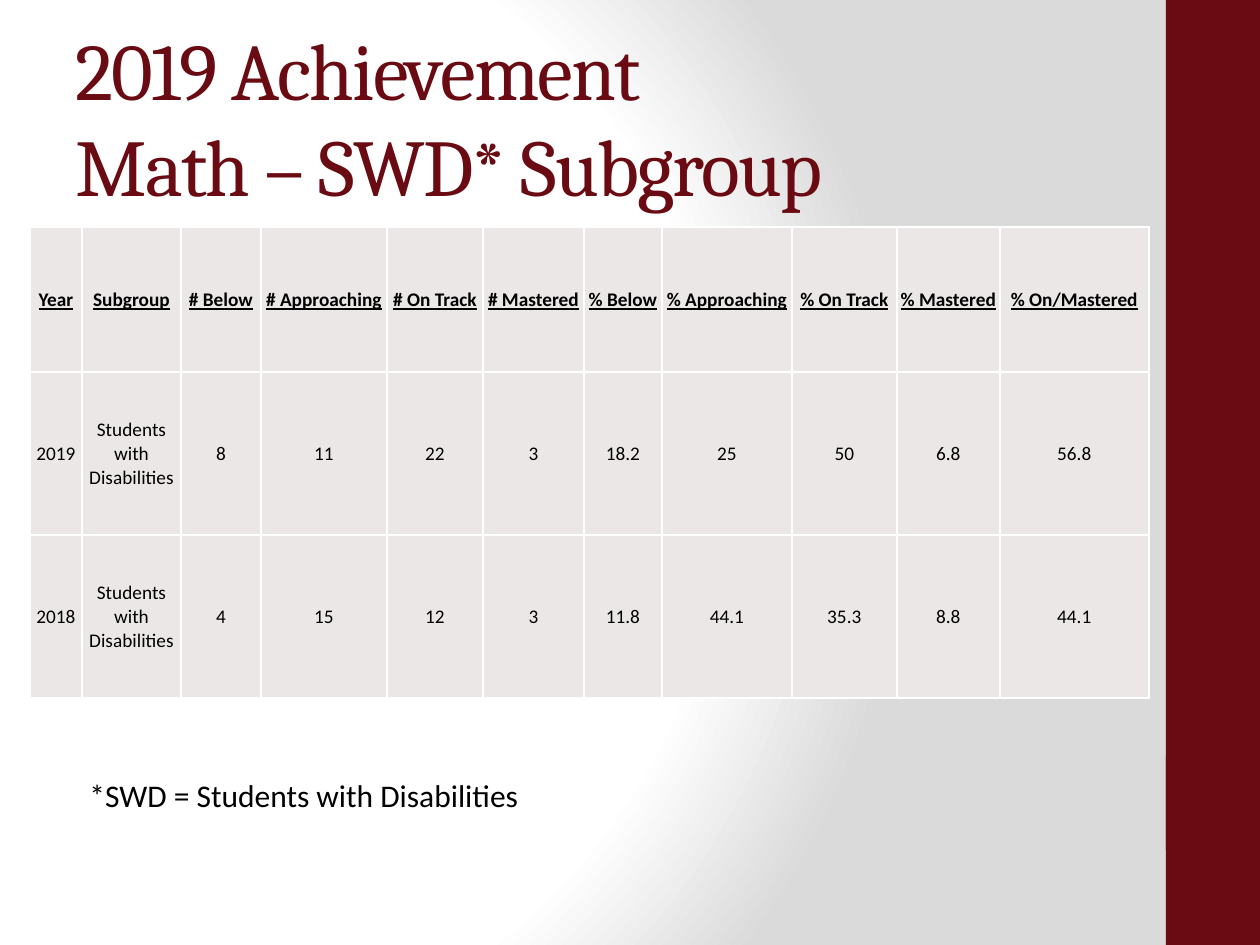
from lxml.etree import SubElement
from pptx import Presentation
from pptx.dml.color import RGBColor
from pptx.enum.shapes import MSO_SHAPE
from pptx.enum.text import MSO_ANCHOR, MSO_AUTO_SIZE, PP_ALIGN
from pptx.oxml import parse_xml
from pptx.oxml.ns import nsdecls, qn
from pptx.util import Emu, Pt

MAROON, BLACK, WHITE, CELL_GRAY = "6A0A12", "000000", "FFFFFF", "EBE7E7"
TITLE = "2019 Achievement\vMath – SWD* Subgroup"
FOOTNOTE = "*SWD = Students with Disabilities"
SUBGROUP = "Students with Disabilities"
TABLE_ROWS = [
    ["Year", "Subgroup", "# Below", "# Approaching", "# On Track", "# Mastered",
     "% Below", "% Approaching", "% On Track", "% Mastered", "% On/Mastered"],
    ["2019", SUBGROUP, "8", "11", "22", "3", "18.2", "25", "50", "6.8", "56.8"],
    ["2018", SUBGROUP, "4", "15", "12", "3", "11.8", "44.1", "35.3", "8.8", "44.1"],
]
COLUMN_WIDTHS = [52, 99, 80, 126, 96, 101, 78, 130, 105, 103, 149]
ROW_HEIGHTS = [145, 163, 163]
SIDE_BANDS = [(1166, 0, 94, 945), (1166, 756, 94, 94)]
GRADIENT_STOPS = [(0, WHITE), (75, WHITE), (100, "DADADA")]


def px(length):
    return Emu(round(length * 914400 / 126))


def color(hex_string):
    return RGBColor.from_string(hex_string)


def write(frame, text, size, font="Calibri", fill=BLACK, align=PP_ALIGN.LEFT,
          bold=False, underline=False, spacing=None):
    frame.text = text
    paragraph = frame.paragraphs[0]
    paragraph.alignment = align
    for run in paragraph.runs:
        run.font.name, run.font.size = font, Pt(size)
        run.font.bold, run.font.underline = bold, underline
        run.font.color.rgb = color(fill)
        if spacing is not None:
            run.font._element.set("spc", str(spacing * 100))


def set_radial_background(slide):
    slide.background.fill.solid()
    properties = slide.background._cSld.bg.bgPr
    stops = "".join(f'<a:gs pos="{position * 1000}"><a:srgbClr val="{value}"/></a:gs>'
                    for position, value in GRADIENT_STOPS)
    gradient = parse_xml(
        f'<a:gradFill {nsdecls("a")} rotWithShape="1"><a:gsLst>{stops}</a:gsLst>'
        '<a:path path="circle"><a:fillToRect l="20000" t="50000" r="100000" b="50000"/>'
        '</a:path></a:gradFill>')
    properties.replace(properties.find(qn("a:solidFill")), gradient)


def add_borders(cell):
    properties = cell._tc.get_or_add_tcPr()
    for index, side in enumerate(("lnL", "lnR", "lnT", "lnB")):
        line = parse_xml(f'<a:{side} {nsdecls("a")} w="12700"/>')
        solid = SubElement(line, qn("a:solidFill"))
        SubElement(solid, qn("a:srgbClr"), val=WHITE)
        properties.insert(index, line)


def add_results_table(slide):
    table = slide.shapes.add_table(
        len(TABLE_ROWS), len(COLUMN_WIDTHS), px(30), px(227),
        px(sum(COLUMN_WIDTHS)), px(sum(ROW_HEIGHTS))).table
    for column, width in zip(table.columns, COLUMN_WIDTHS):
        column.width = px(width)
    for row, height, values in zip(table.rows, ROW_HEIGHTS, TABLE_ROWS):
        row.height = px(height)
        is_header = values is TABLE_ROWS[0]
        for cell, value in zip(row.cells, values):
            cell.fill.solid()
            cell.fill.fore_color.rgb = color(CELL_GRAY)
            cell.margin_left = cell.margin_right = cell.margin_top = px(1)
            cell.margin_bottom = 0
            cell.vertical_anchor = MSO_ANCHOR.MIDDLE
            write(cell.text_frame, value, 11, align=PP_ALIGN.CENTER,
                  bold=is_header, underline=is_header)
            add_borders(cell)


def main():
    presentation = Presentation()
    presentation.slide_width, presentation.slide_height = px(1260), px(945)
    slide = presentation.slides.add_slide(presentation.slide_layouts[5])
    set_radial_background(slide)

    for bounds in SIDE_BANDS:
        band = slide.shapes.add_shape(MSO_SHAPE.RECTANGLE, *map(px, bounds))
        band.shadow.inherit = False
        band.fill.solid()
        band.fill.fore_color.rgb = color(MAROON)
        band.line.fill.background()

    title = slide.shapes.title
    title.left, title.top, title.width, title.height = map(px, (63, 38, 1050, 157))
    title.text_frame.auto_size = MSO_AUTO_SIZE.NONE
    title.text_frame.vertical_anchor = MSO_ANCHOR.MIDDLE
    write(title.text_frame, TITLE, 46, font="Cambria", fill=MAROON, spacing=-1)

    footnote = slide.shapes.add_textbox(px(77), px(770), px(460), px(127))
    footnote.text_frame.word_wrap = False
    write(footnote.text_frame, FOOTNOTE, 18)

    add_results_table(slide)
    presentation.save("out.pptx")


if __name__ == "__main__":
    main()
